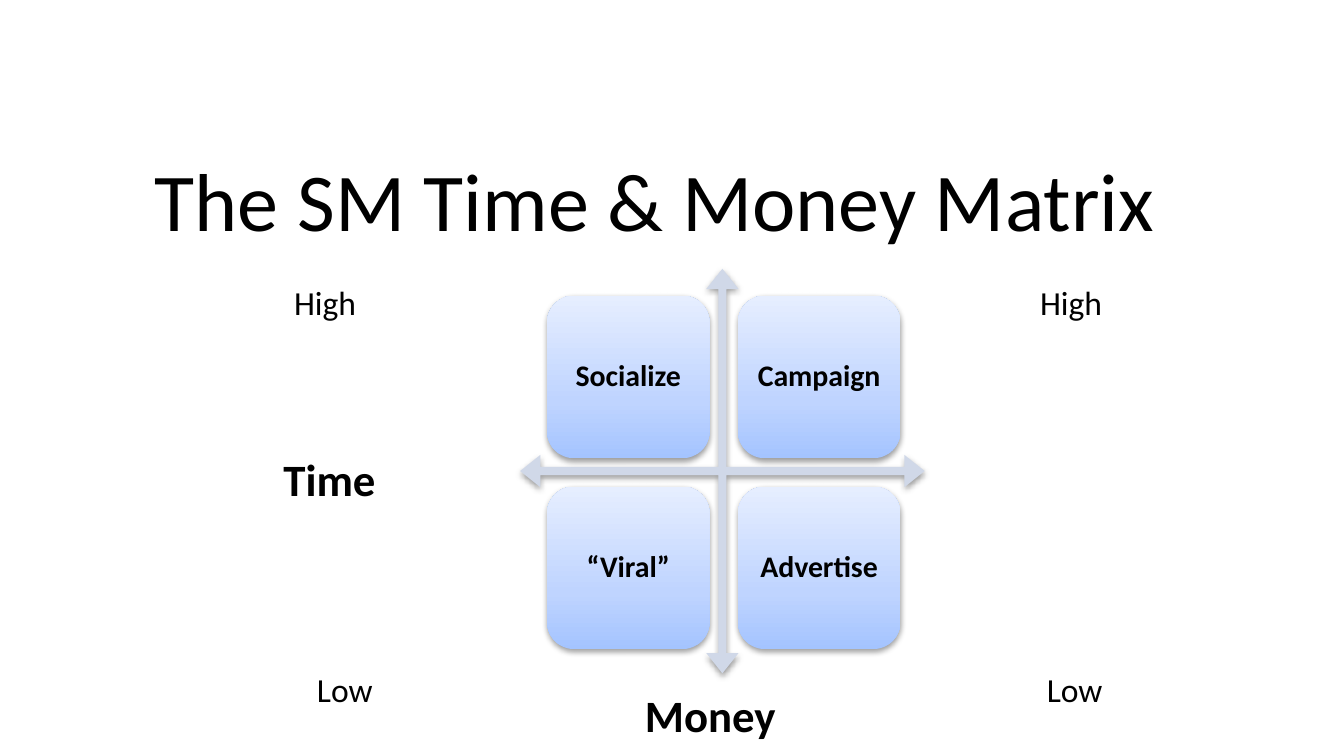
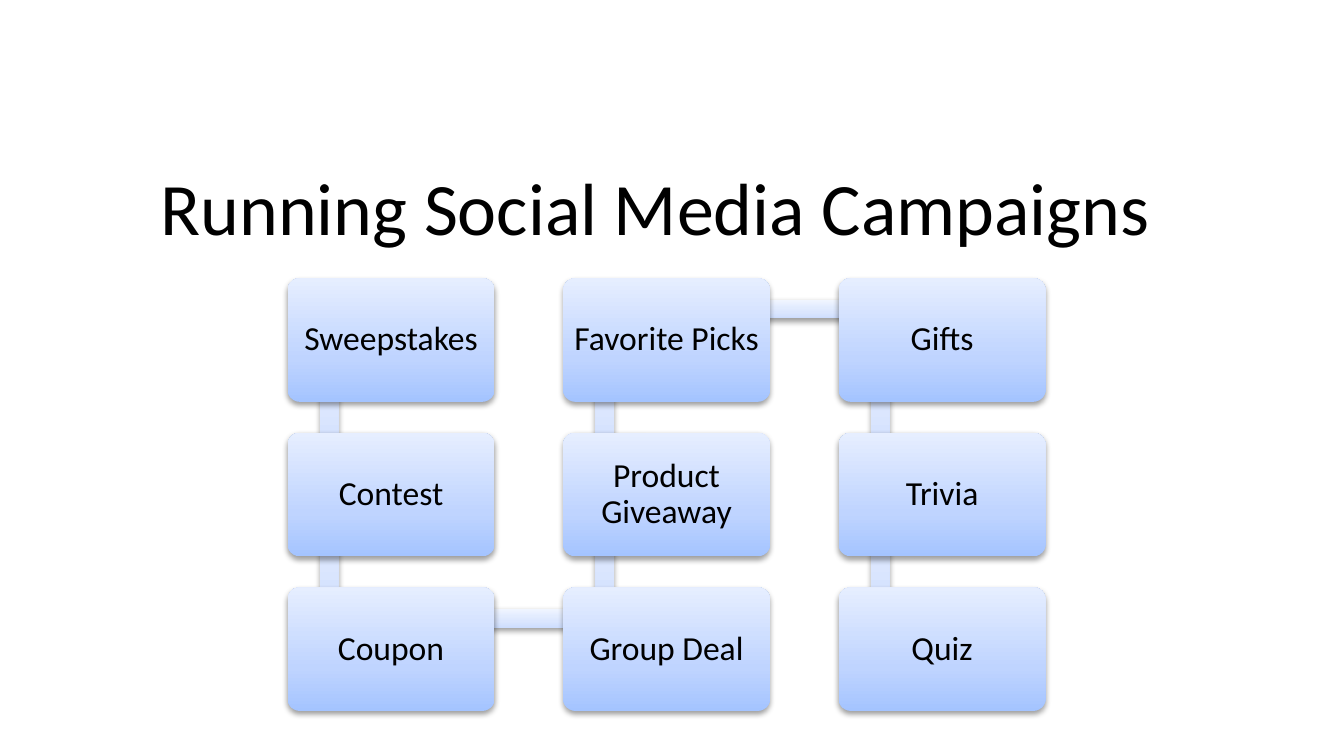
from copy import deepcopy
from lxml.etree import SubElement
from pptx import Presentation
from pptx.dml.color import RGBColor
from pptx.enum.shapes import MSO_SHAPE
from pptx.enum.text import MSO_ANCHOR, MSO_AUTO_SIZE, PP_ALIGN
from pptx.oxml.ns import qn
from pptx.util import Inches, Pt

FONT = "Calibri"
BLACK = "000000"
ARROW_COLOUR = "D0D8E8"
STOPS = (0, 0.35, 1)
CARD_COLOURS = ("A4C4FF", "BFD4FF", "E6EEFF")
LINK_COLOURS = ("CDDDFE", "DBE6FE", "F0F5FF")


def write(shape, text, size, bold=False, align=PP_ALIGN.LEFT, spacing=None):
    paragraph = shape.text_frame.paragraphs[0]
    paragraph.alignment = align
    paragraph.line_spacing = spacing
    run = paragraph.add_run()
    run.text = text
    run.font.name = FONT
    run.font.size = Pt(size)
    run.font.bold = bold
    run.font.color.rgb = RGBColor.from_string(BLACK)


def add_panel(slide, preset, left, top, width, height, colours, text="", size=18, bold=False):
    """Add a borderless shape with a soft shadow, a flat or graded fill and centred text."""
    shape = slide.shapes.add_shape(
        preset, Inches(left), Inches(top), Inches(width), Inches(height))
    shape.line.fill.background()
    if len(colours) == 1:
        shape.fill.solid()
        shape.fill.fore_color.rgb = RGBColor.from_string(colours[0])
    else:
        shape.fill.gradient()
        shape.fill.gradient_angle = 90
        gradient = shape.element.spPr.find(qn("a:gradFill"))
        gradient.set("rotWithShape", "0")
        stop_list = gradient.find(qn("a:gsLst"))
        stop_list.append(deepcopy(stop_list[-1]))
        for stop, position, colour in zip(shape.fill.gradient_stops, STOPS, colours):
            stop.position = position
            stop.color.rgb = RGBColor.from_string(colour)

    shape.shadow.inherit = False
    effects = shape.element.spPr.find(qn("a:effectLst"))
    shadow = SubElement(effects, qn("a:outerShdw"), blurRad="40000", dist="20000",
                        dir="5400000", rotWithShape="0")
    shadow_colour = SubElement(shadow, qn("a:srgbClr"), val=BLACK)
    SubElement(shadow_colour, qn("a:alpha"), val="38000")

    if text:
        frame = shape.text_frame
        frame.word_wrap = True
        frame.vertical_anchor = MSO_ANCHOR.MIDDLE
        frame.margin_left = frame.margin_right = Inches(0.04)
        frame.margin_top = frame.margin_bottom = Inches(0.04)
        write(shape, text, size, bold, PP_ALIGN.CENTER, 0.9)
    return shape


presentation = Presentation()
presentation.slide_width = Inches(10)
presentation.slide_height = presentation.slide_width * 9 // 16
blank_layout = presentation.slide_layouts[6]

# Slides and their titles
slides = []
for title, top, size in (("The SM Time & Money Matrix", 1.06, 44),
                         ("Running Social Media Campaigns", 1.15, 39.6)):
    slide = presentation.slides.add_slide(blank_layout)
    title_box = slide.shapes.add_textbox(0, Inches(top), Inches(9.75), Inches(0.75))
    title_box.text_frame.word_wrap = True
    write(title_box, title, size, align=PP_ALIGN.CENTER)
    slides.append(slide)
matrix_slide, campaign_slide = slides

# Matrix: crossed arrows behind two rows of two quadrants
arrows = add_panel(matrix_slide, MSO_SHAPE.QUAD_ARROW, 3.87, 2, 3.01, 3.01, (ARROW_COLOUR,))
for index, adjustment in enumerate((0.02, 0.04, 0.05)):
    arrows.adjustments[index] = adjustment

quadrant_size, quadrant_pitch = 1.21, 1.42
for row, names in enumerate((("Socialize", "Campaign"), ("“Viral”", "Advertise"))):
    for column, name in enumerate(names):
        add_panel(matrix_slide, MSO_SHAPE.ROUNDED_RECTANGLE,
                  4.07 + column * quadrant_pitch, 2.2 + row * quadrant_pitch,
                  quadrant_size, quadrant_size, CARD_COLOURS, name, 16, True)

# Matrix: axis names and their ends
for text, left, top, width, height, size, bold in (
        ("High", 2.09, 2.05, 0.67, 0.4, 18, False),
        ("High", 7.64, 2.05, 0.67, 0.4, 18, False),
        ("Low", 2.26, 4.93, 0.62, 0.4, 18, False),
        ("Time", 2.01, 3.31, 0.89, 0.5, 24, True),
        ("Money", 4.7, 5.07, 1.19, 0.5, 24, True),
        ("Low", 7.69, 4.93, 0.62, 0.4, 18, False)):
    label = matrix_slide.shapes.add_textbox(
        Inches(left), Inches(top), Inches(width), Inches(height))
    label.text_frame.word_wrap = False
    label.text_frame.auto_size = MSO_AUTO_SIZE.SHAPE_TO_FIT_TEXT
    write(label, text, size, bold)

# Campaigns: a chain that runs down, up and down through three columns
campaigns = ("Sweepstakes", "Contest", "Coupon",
             "Group Deal", "Product Giveaway", "Favorite Picks",
             "Gifts", "Trivia", "Quiz")
card_width, card_height = 1.54, 0.92
column_pitch, row_pitch = 2.05, 1.15
link_width = 0.14
cards = []
for index, name in enumerate(campaigns):
    column, step = divmod(index, 3)
    row = 2 - step if column == 1 else step
    cards.append((name, column, 2.14 + column * column_pitch, 2.07 + row * row_pitch))

for index, (name, column, left, top) in enumerate(cards):
    if index + 1 < len(cards):
        next_column, next_left, next_top = cards[index + 1][1:]
        same_column = column == next_column
        length = row_pitch if same_column else column_pitch
        center_x = (left + next_left) / 2 + 0.31
        center_y = (top + next_top) / 2 + 0.23
        link = add_panel(campaign_slide, MSO_SHAPE.RECTANGLE,
                         center_x - length / 2, center_y - link_width / 2,
                         length, link_width, LINK_COLOURS)
        if same_column:
            link.rotation = 270 if column == 1 else 90
    card = add_panel(campaign_slide, MSO_SHAPE.ROUNDED_RECTANGLE, left, top,
                     card_width, card_height, CARD_COLOURS, name)
    card.adjustments[0] = 0.1

presentation.save("out.pptx")
